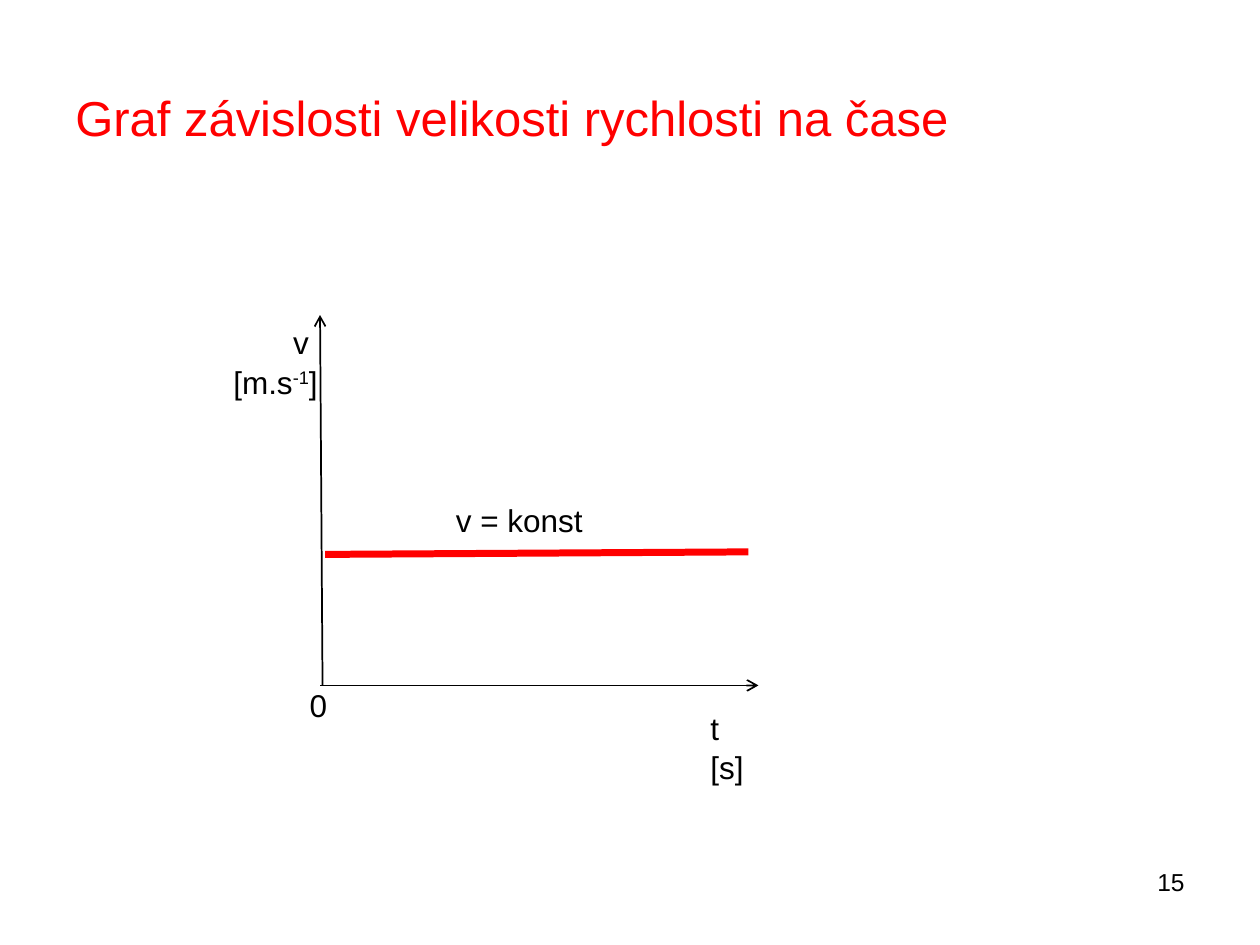
from dataclasses import dataclass

from lxml import etree
from pptx import Presentation
from pptx.dml.color import RGBColor
from pptx.enum.shapes import MSO_CONNECTOR
from pptx.enum.text import MSO_ANCHOR, PP_ALIGN
from pptx.oxml.ns import qn
from pptx.util import Inches, Pt

STRAIGHT = MSO_CONNECTOR.STRAIGHT
TOP, MIDDLE = MSO_ANCHOR.TOP, MSO_ANCHOR.MIDDLE
LEFT, RIGHT = PP_ALIGN.LEFT, PP_ALIGN.RIGHT
BLACK, RED = "000000", "FF0000"
SUPERSCRIPT = "30000"


@dataclass
class Label:
    box: tuple[float, float, float, float]
    lines: list[list[str]]
    size: int = 18
    color: str = BLACK
    align: PP_ALIGN = LEFT
    anchor: MSO_ANCHOR = TOP
    spacing: float = 1.05


@dataclass
class Line:
    start: tuple[float, float]
    end: tuple[float, float]
    color: str = BLACK
    width: float = 1
    arrow: bool = True


LABELS = [
    Label((0.5, 0.3, 9, 1.25), [["Graf závislosti velikosti rychlosti na čase"]],
          28, RED, anchor=MIDDLE, spacing=1),
    Label((7.17, 6.83, 2.33, 0.52), [["15"]], 14, align=RIGHT, spacing=1),
    Label((5.54, 5.56, 0.47, 0.31), [["t [s]"]]),
    Label((1.72, 2.5, 0.9, 0.71), [["v "], ["[m.s", "-1", "]"]], align=RIGHT),
    Label((2.36, 5.38, 0.26, 0.31), [["0"]]),
    Label((3.52, 3.91, 1.37, 0.4), [["v = konst"]]),
]
LINES = [
    Line((6.02, 5.44), (2.54, 5.44)),
    Line((2.54, 2.5), (2.56, 5.44)),
    Line((2.58, 4.4), (5.94, 4.38), RED, 4, arrow=False),
]


def rgb(color: str) -> RGBColor:
    return RGBColor.from_string(color)


def add_label(s, label: Label) -> None:
    tf = s.shapes.add_textbox(*map(Inches, label.box)).text_frame
    tf.word_wrap = True
    tf.vertical_anchor = label.anchor
    for i, runs in enumerate(label.lines):
        p = tf.add_paragraph() if i else tf.paragraphs[0]
        p.alignment = label.align
        p.line_spacing = label.spacing
        p.font.name = "Arial"
        p.font.size = Pt(label.size)
        p.font.color.rgb = rgb(label.color)
        for text in runs:
            r = p.add_run()
            r.text = text
            if text == "-1":
                r.font._element.set("baseline", SUPERSCRIPT)


def add_line(s, line: Line) -> None:
    c = s.shapes.add_connector(STRAIGHT, *map(Inches, line.start + line.end))
    c.line.color.rgb = rgb(line.color)
    c.line.width = Pt(line.width)
    if line.arrow:
        ln = c.line._get_or_add_ln()
        etree.SubElement(ln, qn("a:headEnd"), type="arrow")
    etree.SubElement(c._element.spPr, qn("a:effectLst"))


def main() -> None:
    prs = Presentation()
    prs.slide_width, prs.slide_height = Inches(10), Inches(7.5)
    s = prs.slides.add_slide(prs.slide_layouts[6])
    for line in LINES:
        add_line(s, line)
    for label in LABELS:
        add_label(s, label)
    prs.save("out.pptx")


if __name__ == "__main__":
    main()
